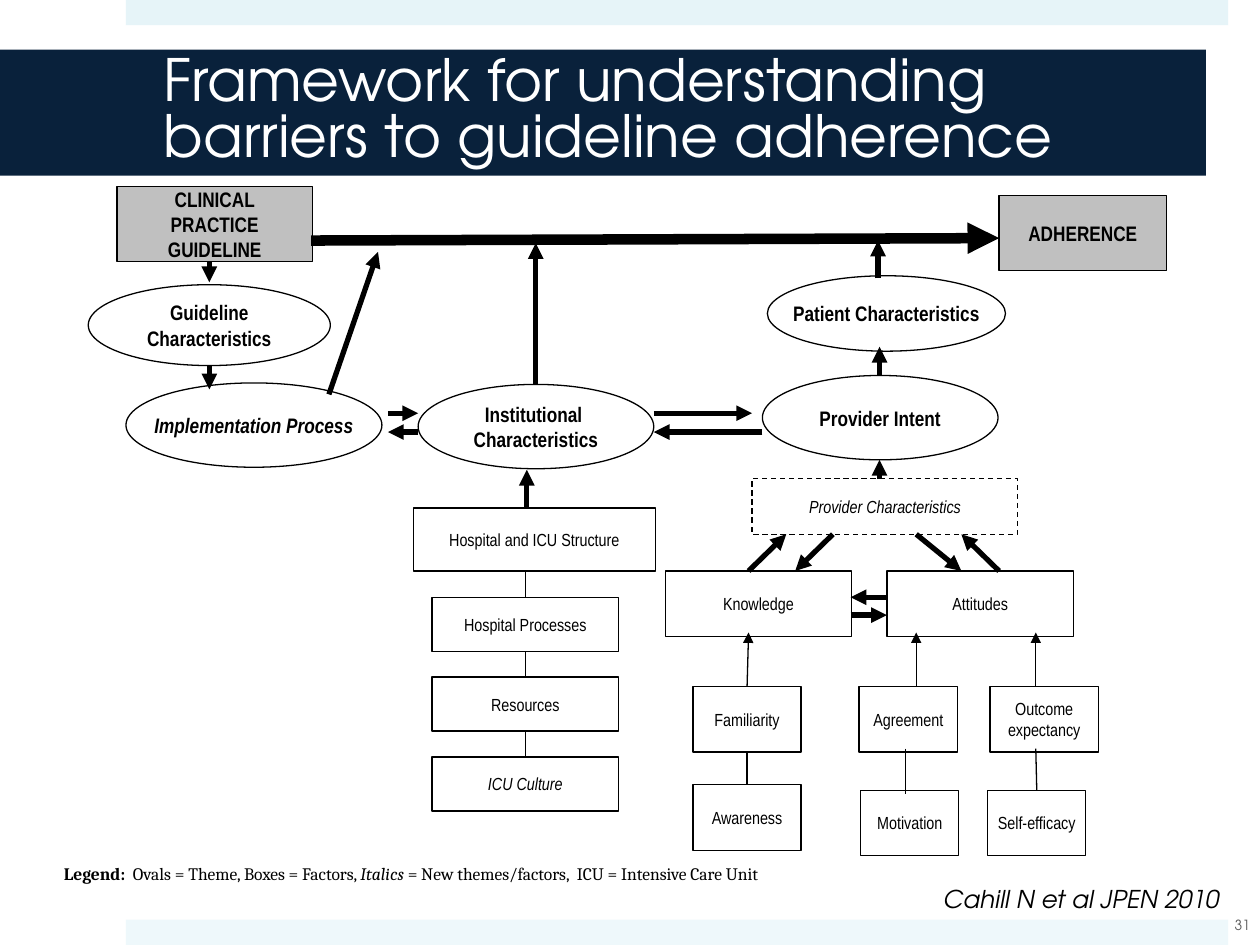
"""Build the slide showing the framework of barriers to guideline adherence."""
from dataclasses import dataclass
from typing import Optional

from lxml.etree import SubElement
from pptx import Presentation
from pptx.dml.color import RGBColor
from pptx.enum.dml import MSO_LINE_DASH_STYLE as Dash
from pptx.enum.shapes import MSO_CONNECTOR as Connector, MSO_SHAPE as Preset
from pptx.enum.text import MSO_ANCHOR as Anchor, PP_ALIGN as Align
from pptx.oxml.ns import qn
from pptx.util import Cm, Pt


@dataclass(frozen=True)
class Theme:
    black: str = "000000"
    white: str = "FFFFFF"
    navy: str = "09213B"
    gray: str = "C0C0C0"
    page_gray: str = "595959"
    top_band: str = "E6F4F8"
    bottom_band: str = "EEF8FB"
    diagram_font: str = "Arial Narrow"
    legend_font: str = "Cambria"
    display_font: str = "TeX Gyre Adventor"
    title_size: float = 33.3
    citation_size: float = 14
    theme_size: float = 12
    factor_size: float = 10
    page_size: float = 8
    thin: float = 0.75
    thick: float = 3
    heavy: float = 6


THEME = Theme()
TOP, LEFT, BOTTOM, RIGHT = range(4)


@dataclass(frozen=True)
class Node:
    text: str
    left: float
    top: float
    width: float
    height: float
    preset: Preset = Preset.RECTANGLE
    fill: Optional[str] = None
    bold: bool = False
    italic: bool = False
    dashed: bool = False


@dataclass(frozen=True)
class Link:
    start: tuple[float, float]
    end: tuple[float, float]
    weight: float = THEME.thick
    arrow: bool = True
    begin_at: Optional[tuple[str, int]] = None
    end_at: Optional[tuple[str, int]] = None


CHAIN = ("Hospital Processes", "Resources", "ICU Culture")
CHAIN_TOP, CHAIN_STEP, CHAIN_HEIGHT, CHAIN_CENTER = 12.04, 1.61, 1.09, 10.59
BOX_HEIGHT = 1.32
CAUSE_TOP = 13.84

NODES = [
    Node("ADHERENCE", 20.14, 3.94, 3.38, 1.52, fill=THEME.gray, bold=True),
    Node("CLINICAL\nPRACTICE\nGUIDELINE", 2.36, 3.76, 3.94, 1.52, fill=THEME.gray, bold=True),
    Node("Guideline\nCharacteristics", 1.78, 5.74, 4.88, 1.63, Preset.OVAL, THEME.white, True),
    Node("Implementation Process", 2.54, 7.72, 5.16, 1.7, Preset.OVAL, THEME.white, True, True),
    Node("Institutional \nCharacteristics", 8.43, 7.75, 4.75, 1.7, Preset.OVAL, bold=True),
    Node("Provider Intent", 15.37, 7.57, 4.75, 1.7, Preset.OVAL, bold=True),
    Node("Patient Characteristics", 15.47, 5.56, 4.8, 1.52, Preset.OVAL, bold=True),
    Node("Provider Characteristics", 15.16, 9.65, 5.36, 1.12, italic=True, dashed=True),
    Node("Hospital and ICU Structure", 8.33, 10.24, 4.88, 1.27),
    Node("Knowledge", 13.41, 11.51, 3.76, BOX_HEIGHT),
    Node("Attitudes", 17.88, 11.51, 3.76, BOX_HEIGHT),
    Node("Familiarity", 13.97, CAUSE_TOP, 2.18, BOX_HEIGHT),
    Node("Agreement", 17.32, CAUSE_TOP, 1.98, BOX_HEIGHT),
    Node("Outcome\nexpectancy", 19.96, CAUSE_TOP, 2.18, BOX_HEIGHT),
    Node("Awareness", 13.97, 15.82, 2.18, BOX_HEIGHT),
    Node("Motivation", 17.35, 15.93, 1.98, BOX_HEIGHT),
    Node("Self-efficacy", 19.91, 15.93, 1.98, BOX_HEIGHT),
] + [
    Node(name, 8.71, CHAIN_TOP + index * CHAIN_STEP, 3.76, CHAIN_HEIGHT, italic=name == "ICU Culture")
    for index, name in enumerate(CHAIN)
]

LINKS = [
    Link((6.27, 4.85), (20.14, 4.8), THEME.heavy),
    Link((4.22, 5.28), (4.22, 5.69)),
    Link((4.22, 7.37), (4.22, 7.85)),
    Link((6.63, 7.95), (7.62, 5.08)),
    Link((10.8, 7.75), (10.8, 4.9)),
    Link((7.82, 8.33), (8.43, 8.33)),
    Link((8.43, 8.71), (7.82, 8.71)),
    Link((13.18, 8.33), (15.16, 8.33)),
    Link((15.37, 8.71), (13.18, 8.71)),
    Link((10.62, 10.24), (10.62, 9.47)),
    Link((17.7, 5.61), (17.7, 4.85)),
    Link((17.73, 7.57), (17.73, 6.99)),
    Link((17.73, 9.65), (17.73, 9.27)),
    Link((15.09, 11.51), (15.85, 10.77)),
    Link((16.79, 10.77), (16.03, 11.51)),
    Link((18.47, 10.77), (19.38, 11.51)),
    Link((20.14, 11.51), (19.38, 10.77)),
    Link((17.88, 12.04), (17.15, 12.04)),
    Link((17.15, 12.4), (17.88, 12.4)),
    Link((15.09, CAUSE_TOP), (15.09, 12.75), THEME.thin, begin_at=("Familiarity", TOP)),
    Link((18.47, CAUSE_TOP), (18.47, 12.75), THEME.thin),
    Link((20.88, CAUSE_TOP), (20.88, 12.75), THEME.thin),
    Link((15.09, 15.82), (15.09, 15.16), THEME.thin, False, ("Awareness", TOP), ("Familiarity", BOTTOM)),
    Link((18.26, 15.09), (18.26, 16), THEME.thin, False),
    Link((20.88, 15.93), (20.88, 15.09), THEME.thin, False, ("Self-efficacy", TOP)),
    Link((CHAIN_CENTER, CHAIN_TOP), (CHAIN_CENTER, 11.51), THEME.thin, False, (CHAIN[0], TOP)),
] + [
    Link((CHAIN_CENTER, CHAIN_TOP + index * CHAIN_STEP),
         (CHAIN_CENTER, CHAIN_TOP + (index - 1) * CHAIN_STEP + CHAIN_HEIGHT),
         THEME.thin, False, (CHAIN[index], TOP), (CHAIN[index - 1], BOTTOM))
    for index in range(1, len(CHAIN))
]


def add_run(paragraph, text: str, *, font: str, size: float, color: str = THEME.black,
            bold: bool = False, italic: bool = False) -> None:
    run = paragraph.add_run()
    run.text = text
    run.font.name, run.font.size = font, Pt(size)
    run.font.bold, run.font.italic = bold, italic
    run.font.color.rgb = RGBColor.from_string(color)


def add_box(slide, preset: Preset, left: float, top: float, width: float, height: float,
            fill: Optional[str] = None):
    shape = slide.shapes.add_shape(preset, Cm(left), Cm(top), Cm(width), Cm(height))
    shape.shadow.inherit = False
    shape.line.fill.background()
    if fill:
        shape.fill.solid()
        shape.fill.fore_color.rgb = RGBColor.from_string(fill)
    else:
        shape.fill.background()
    return shape


def add_node(slide, node: Node):
    shape = add_box(slide, node.preset, node.left, node.top, node.width, node.height, node.fill)
    shape.line.color.rgb = RGBColor.from_string(THEME.black)
    shape.line.width = Pt(THEME.thin)
    if node.dashed:
        shape.line.dash_style = Dash.DASH
    frame = shape.text_frame
    frame.word_wrap, frame.vertical_anchor = False, Anchor.MIDDLE
    for index, text in enumerate(node.text.split("\n")):
        paragraph = frame.add_paragraph() if index else frame.paragraphs[0]
        paragraph.alignment = Align.CENTER
        add_run(paragraph, text, font=THEME.diagram_font, bold=node.bold, italic=node.italic,
                size=THEME.theme_size if node.bold else THEME.factor_size)
    return shape


def add_link(slide, link: Link, shapes: dict) -> None:
    connector = slide.shapes.add_connector(
        Connector.STRAIGHT, *(Cm(value) for value in link.start + link.end))
    if link.begin_at:
        connector.begin_connect(shapes[link.begin_at[0]], link.begin_at[1])
    if link.end_at:
        connector.end_connect(shapes[link.end_at[0]], link.end_at[1])
    connector.line.color.rgb = RGBColor.from_string(THEME.black)
    connector.line.width = Pt(link.weight)
    properties = connector.element.spPr
    if link.arrow:
        SubElement(properties.find(qn("a:ln")), qn("a:tailEnd"), type="triangle")
    SubElement(properties, qn("a:effectLst"))


def add_title(slide) -> None:
    frame = add_box(slide, Preset.RECTANGLE, 0, 1, 24.31, 2.54, THEME.navy).text_frame
    frame.word_wrap, frame.vertical_anchor = True, Anchor.MIDDLE
    frame.margin_left, frame.margin_right = Cm(3.3), Cm(0.76)
    paragraph = frame.paragraphs[0]
    paragraph.alignment, paragraph.line_spacing = Align.LEFT, 0.8
    add_run(paragraph, "Framework for understanding barriers to guideline adherence",
            font=THEME.display_font, size=THEME.title_size, color=THEME.white)


def add_footer(slide) -> None:
    frame = slide.shapes.add_textbox(Cm(1.04), Cm(17.27), Cm(23.93), Cm(1.7)).text_frame
    frame.word_wrap = True
    legend, citation = frame.paragraphs[0], frame.add_paragraph()
    for text, bold, italic in (
            ("Legend:  ", True, False), ("Ovals = Theme, Boxes = Factors, ", False, False),
            ("Italics ", False, True),
            ("= New themes/factors,  ICU = Intensive Care Unit", False, False)):
        add_run(legend, text, font=THEME.legend_font, size=THEME.factor_size, bold=bold, italic=italic)
    citation.alignment = Align.RIGHT
    add_run(citation, "Cahill N et al JPEN 2010 ", font=THEME.display_font,
            size=THEME.citation_size, italic=True)
    page = slide.shapes.add_textbox(Cm(24.69), Cm(18.24), Cm(0.71), Cm(0.8)).text_frame
    page.margin_left = page.margin_right = Cm(0)
    page.word_wrap, page.vertical_anchor = True, Anchor.MIDDLE
    page.paragraphs[0].alignment = Align.CENTER
    add_run(page.paragraphs[0], "31", font=THEME.display_font, size=THEME.page_size,
            color=THEME.page_gray)


def main() -> None:
    presentation = Presentation()
    presentation.slide_width, presentation.slide_height = Cm(25.4), Cm(19.05)
    slide = presentation.slides.add_slide(presentation.slide_layouts[6])
    for top, color in ((0, THEME.top_band), (18.54, THEME.bottom_band)):
        add_box(slide, Preset.RECTANGLE, 2.54, top, 22.22, 0.51, color)
    add_footer(slide)
    shapes = {node.text: add_node(slide, node) for node in NODES}
    for link in LINKS:
        add_link(slide, link, shapes)
    add_title(slide)
    presentation.save("out.pptx")


if __name__ == "__main__":
    main()
